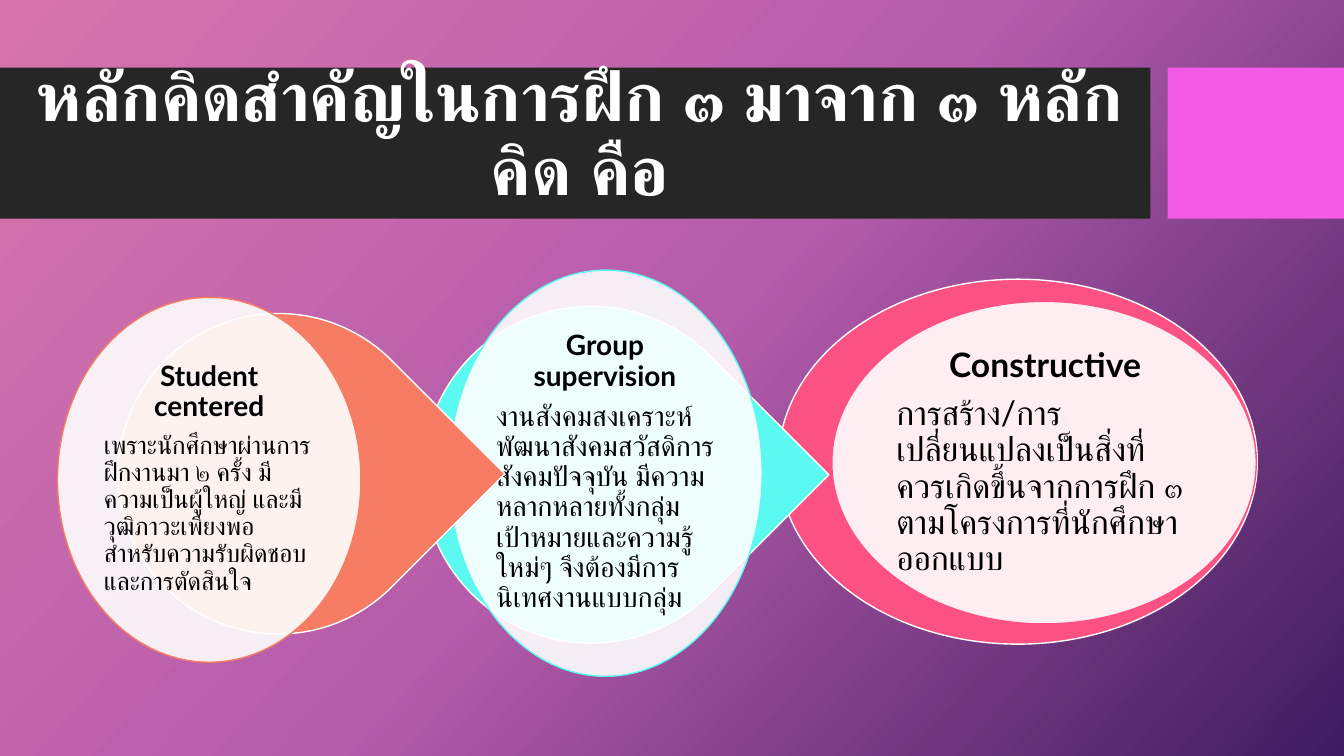
from copy import deepcopy

from lxml.etree import SubElement
from pptx import Presentation
from pptx.dml.color import RGBColor
from pptx.enum.shapes import MSO_SHAPE as SHAPE
from pptx.enum.text import MSO_ANCHOR as ANCHOR, MSO_AUTO_SIZE as AUTOSIZE, PP_ALIGN as ALIGN
from pptx.oxml.ns import qn
from pptx.util import Pt

PX = 9144  # 100 px to the inch


def color(hex_code):
    return RGBColor.from_string(hex_code)


def add_figure(kind, place, fill, line=None, opacity=100):
    figure = page.shapes.add_shape(kind, *[n * PX for n in place])
    figure.shadow.inherit = False
    figure.fill.solid()
    figure.fill.fore_color.rgb = color(fill)
    if opacity < 100:
        tint = figure.fill._xPr.find(qn("a:solidFill"))[0]
        SubElement(tint, qn("a:alpha"), val=str(opacity * 1000))
    if line:
        figure.line.color.rgb = color(line)
        figure.line.width = Pt(1)
    else:
        figure.line.fill.background()
    return figure


deck = Presentation()
deck.slide_width, deck.slide_height = 1333 * PX, 750 * PX
page = deck.slides.add_slide(deck.slide_layouts[5])

# Gradient background with three stops
backdrop = page.background.fill
backdrop.gradient()
backdrop.gradient_angle = 318
stop_list = page.element.find(".//" + qn("a:gsLst"))
stop_list.insert(1, deepcopy(stop_list[0]))
for stop, place, shade in zip(backdrop.gradient_stops, (0, 0.5, 1), ("D774AD", "B55CAB", "3E1C5F")):
    stop.position = place
    stop.color.rgb = color(shade)

# Title band, placed behind the title
title = page.shapes.title
bands = [add_figure(SHAPE.RECTANGLE, (0, 67, 1141, 150), "262626"),
         add_figure(SHAPE.RECTANGLE, (1158, 67, 175, 150), "F35AE6")]
for band in bands:
    title.element.addprevious(band.element)

title.left, title.top, title.width, title.height = [n * PX for n in (24, 71, 1102, 129)]
frame = title.text_frame
frame.text = "หลักคิดสำคัญในการฝึก ๓ มาจาก ๓ หลักคิด คือ"
frame.word_wrap = True
frame.auto_size = AUTOSIZE.NONE
frame.vertical_anchor = ANCHOR.MIDDLE
para = frame.paragraphs[0]
para.alignment = ALIGN.CENTER
para.line_spacing = 0.9
para.font.name, para.font.size, para.font.bold = "Lato", Pt(48.6), True
para.font.color.rgb = color("FFFFFF")

# Principles from back to front: outer shape, inner ellipse, text box, heading and body
principles = [
    (SHAPE.OVAL, (772, 277, 475, 362), (825, 299, 421, 320), (886, 345, 301, 229), "FC5283",
     "Constructive", 24,
     "การสร้าง/การเปลี่ยนแปลงเป็นสิ่งที่ควรเกิดขึ้นจากการฝึก ๓ ตามโครงการที่นักศึกษาออกแบบ", 24),
    (SHAPE.TEAR, (419, 304, 334, 334), (445, 268, 311, 403), (489, 325, 222, 288), "5BF9EF",
     "Group supervision", 20,
     "งานสังคมสงเคราะห์พัฒนาสังคมสวัสดิการสังคมปัจจุบัน มีความหลากหลายทั้งกลุ่มเป้าหมาย"
     "และความรู้ใหม่ๆ จึงต้องมีการนิเทศงานแบบกลุ่ม", 20),
    (SHAPE.TEAR, (117, 311, 318, 318), (57, 295, 301, 362), (100, 346, 215, 258), "F67C64",
     "Student centered", 20,
     "เพราะนักศึกษาผ่านการฝึกงานมา ๒ ครั้ง มีความเป็นผู้ใหญ่ และมีวุฒิภาวะเพียงพอ"
     "สำหรับความรับผิดชอบและการตัดสินใจ", 18),
]
for kind, outer, inner, area, accent, heading, heading_size, body, body_size in principles:
    figure = add_figure(kind, outer, accent, "FFFFFF")
    if kind == SHAPE.TEAR:
        figure.rotation = 45
    add_figure(SHAPE.OVAL, inner, "FFFFFF", accent, 90)

    box = page.shapes.add_textbox(*[n * PX for n in area])
    frame = box.text_frame
    frame.word_wrap = True
    frame.vertical_anchor = ANCHOR.MIDDLE
    frame.margin_left = frame.margin_top = frame.margin_right = frame.margin_bottom = 3 * PX
    frame.text = f"{heading}\n{body}"
    styles = ((ALIGN.CENTER, heading_size, True), (ALIGN.LEFT, body_size, False))
    for para, (align, size, bold) in zip(frame.paragraphs, styles):
        para.alignment = align
        para.line_spacing = 0.9
        para.space_after = Pt(size * 0.35)
        para.font.name, para.font.size, para.font.bold = "Lato", Pt(size), bold
        para.font.color.rgb = color("000000")

deck.save("out.pptx")
